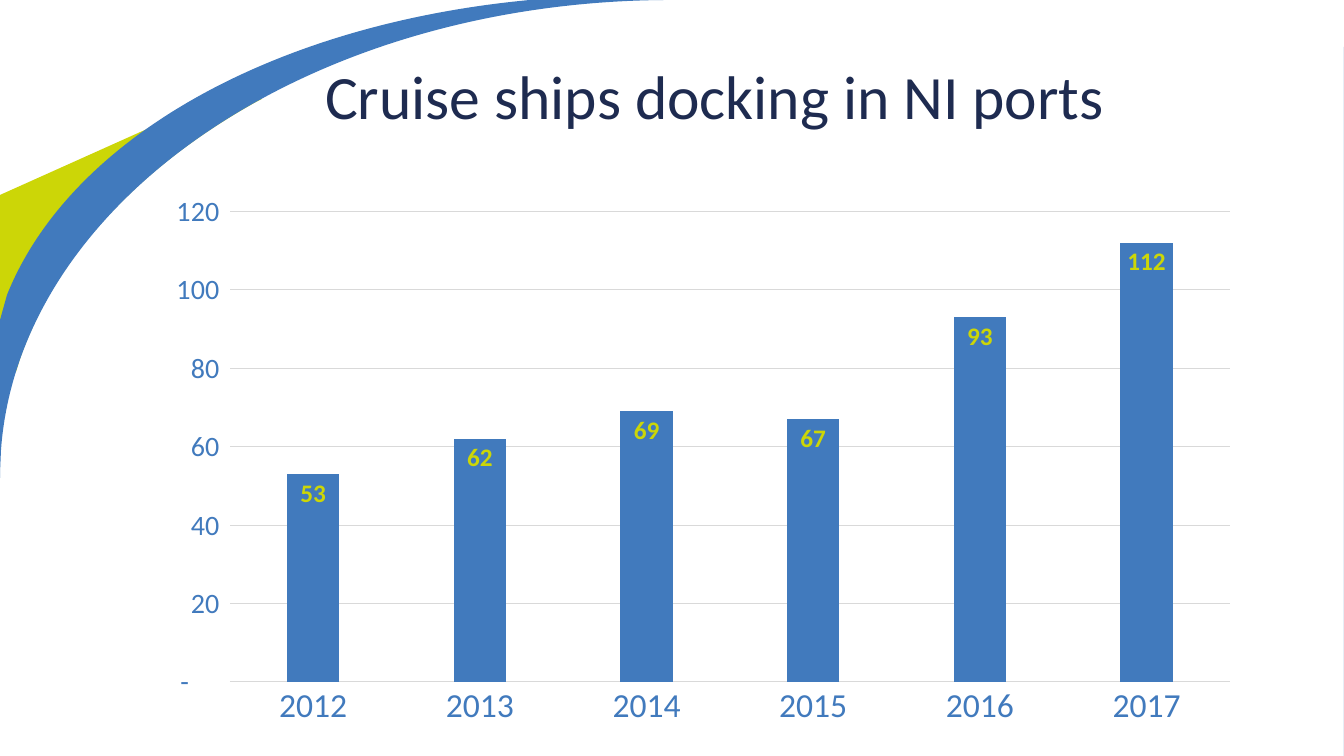
from dataclasses import dataclass
from typing import NamedTuple

from lxml.etree import SubElement
from pptx import Presentation
from pptx.chart.data import CategoryChartData
from pptx.dml.color import RGBColor
from pptx.enum.chart import XL_CHART_TYPE, XL_LABEL_POSITION, XL_TICK_MARK
from pptx.enum.text import MSO_ANCHOR, MSO_AUTO_SIZE, PP_ALIGN
from pptx.oxml.ns import qn
from pptx.util import Pt

SLIDE_WIDTH, SLIDE_HEIGHT = 1344, 756
EMU_PER_PX = 12192000 / SLIDE_WIDTH


def px(length):
    return round(length * EMU_PER_PX)


@dataclass(frozen=True)
class Theme:
    font: str = "Calibri"
    navy: RGBColor = RGBColor(0x1E, 0x2B, 0x50)
    blue: RGBColor = RGBColor(0x41, 0x7A, 0xBD)
    lime: RGBColor = RGBColor(0xCC, 0xD6, 0x07)
    grid: RGBColor = RGBColor(0xD9, 0xD9, 0xD9)
    chart_size: int = 10
    title_size: int = 44
    category_size: int = 24
    value_size: int = 20
    label_size: int = 18
    line_width: float = 0.75


class Line(NamedTuple):
    end: tuple


class Curve(NamedTuple):
    first_control: tuple
    second_control: tuple
    end: tuple


class SlideBuilder:
    def __init__(self, page, theme):
        self.page = page
        self.theme = theme

    def style_font(self, font, size, color, bold=False):
        font.name = self.theme.font
        font.size = Pt(size)
        font.color.rgb = color
        font.bold = bold

    def style_line(self, line):
        line.color.rgb = self.theme.grid
        line.width = Pt(self.theme.line_width)

    def swoosh(self, contours, color):
        builder = None
        for start, steps in contours:
            corner = px(start[0]), px(start[1])
            if builder is None:
                builder = self.page.shapes.build_freeform(*corner, scale=1.0)
            else:
                builder.move_to(*corner)
            ends = [(px(step.end[0]), px(step.end[1])) for step in steps]
            builder.add_line_segments(ends, close=True)
        shape = builder.convert_to_shape()
        self.bend(shape, [step for _, steps in contours for step in steps])
        shape.shadow.inherit = False
        shape.fill.solid()
        shape.fill.fore_color.rgb = color
        shape.line.fill.background()

    def bend(self, shape, steps):
        segments = list(shape.element.iter(qn("a:lnTo")))
        for segment, step in zip(segments, steps):
            if isinstance(step, Curve):
                outline = segment.getparent()
                bezier = SubElement(outline, qn("a:cubicBezTo"))
                for x, y in step:
                    SubElement(bezier, qn("a:pt"),
                               x=str(px(x) - shape.left), y=str(px(y) - shape.top))
                outline.replace(segment, bezier)

    def title(self, text, left, top, width, height):
        box = self.page.shapes.title
        box.element.getparent().append(box.element)
        box.left, box.top = px(left), px(top)
        box.width, box.height = px(width), px(height)
        frame = box.text_frame
        frame.text = text
        frame.word_wrap = True
        frame.auto_size = MSO_AUTO_SIZE.NONE
        frame.vertical_anchor = MSO_ANCHOR.MIDDLE
        para = frame.paragraphs[0]
        para.alignment = PP_ALIGN.LEFT
        para.line_spacing = 0.9
        self.style_font(para.font, self.theme.title_size, self.theme.navy)

    def column_chart(self, values_by_year, left, top, width, height):
        theme = self.theme
        data = CategoryChartData()
        data.categories = list(values_by_year)
        data.add_series("Series 1", list(values_by_year.values()))
        chart = self.page.shapes.add_chart(
            XL_CHART_TYPE.COLUMN_CLUSTERED,
            px(left), px(top), px(width), px(height), data,
        ).chart
        chart.has_title = False
        chart.has_legend = False
        chart.font.name = theme.font
        chart.font.size = Pt(theme.chart_size)

        years = chart.category_axis
        years.major_tick_mark = XL_TICK_MARK.NONE
        self.style_font(years.tick_labels.font, theme.category_size, theme.blue)
        self.style_line(years.format.line)

        counts = chart.value_axis
        counts.minimum_scale, counts.maximum_scale, counts.major_unit = 0, 120, 20
        counts.major_tick_mark = XL_TICK_MARK.NONE
        counts.format.line.fill.background()
        self.style_line(counts.major_gridlines.format.line)
        self.style_font(counts.tick_labels.font, theme.value_size, theme.blue)
        counts.tick_labels.number_format = r'_-* #,##0_-;\-* #,##0_-;_-* "-"??_-;_-@_'
        counts.tick_labels.number_format_is_linked = False

        plot = chart.plots[0]
        plot.vary_by_categories = False
        plot.gap_width, plot.overlap = 219, -27
        series = plot.series[0]
        series.format.fill.solid()
        series.format.fill.fore_color.rgb = theme.blue
        labels = series.data_labels
        labels.show_value = True
        labels.position = XL_LABEL_POSITION.INSIDE_END
        self.style_font(labels.font, theme.label_size, theme.lime, bold=True)


def main():
    deck = Presentation()
    deck.slide_width, deck.slide_height = px(SLIDE_WIDTH), px(SLIDE_HEIGHT)
    theme = Theme()
    slide = SlideBuilder(deck.slides.add_slide(deck.slide_layouts[5]), theme)

    lime_wedge = ((254, 81), [
        Line((262, 99)),
        Line((256, 102)),
        Curve((141, 166), (56, 255), (20, 359)),
        Line((16, 372)),
        Line((0, 335)),
        Line((0, 195)),
    ])
    right_edge = ((1344, 47), [Line((1344, 756)), Line((1344, 160))])
    blue_arc = ((708, 0), [
        Line((722, 0)),
        Line((672, 0)),
        Curve((312, 0), (19, 200), (1, 450)),
        Line((0, 473)),
        Line((0, 478)),
        Line((0, 320)),
        Line((7, 295)),
        Curve((70, 138), (274, 24), (530, 0)),
        Line((553, 0)),
    ])
    slide.swoosh([lime_wedge], theme.lime)
    slide.swoosh([right_edge, blue_arc], theme.blue)
    slide.title("Cruise ships docking in NI ports", 315, 34, 936, 132)
    ships_by_year = {
        "2012": 53, "2013": 62, "2014": 69, "2015": 67, "2016": 93, "2017": 112,
    }
    slide.column_chart(ships_by_year, 148, 183, 1104, 555)
    deck.save("out.pptx")


if __name__ == "__main__":
    main()
